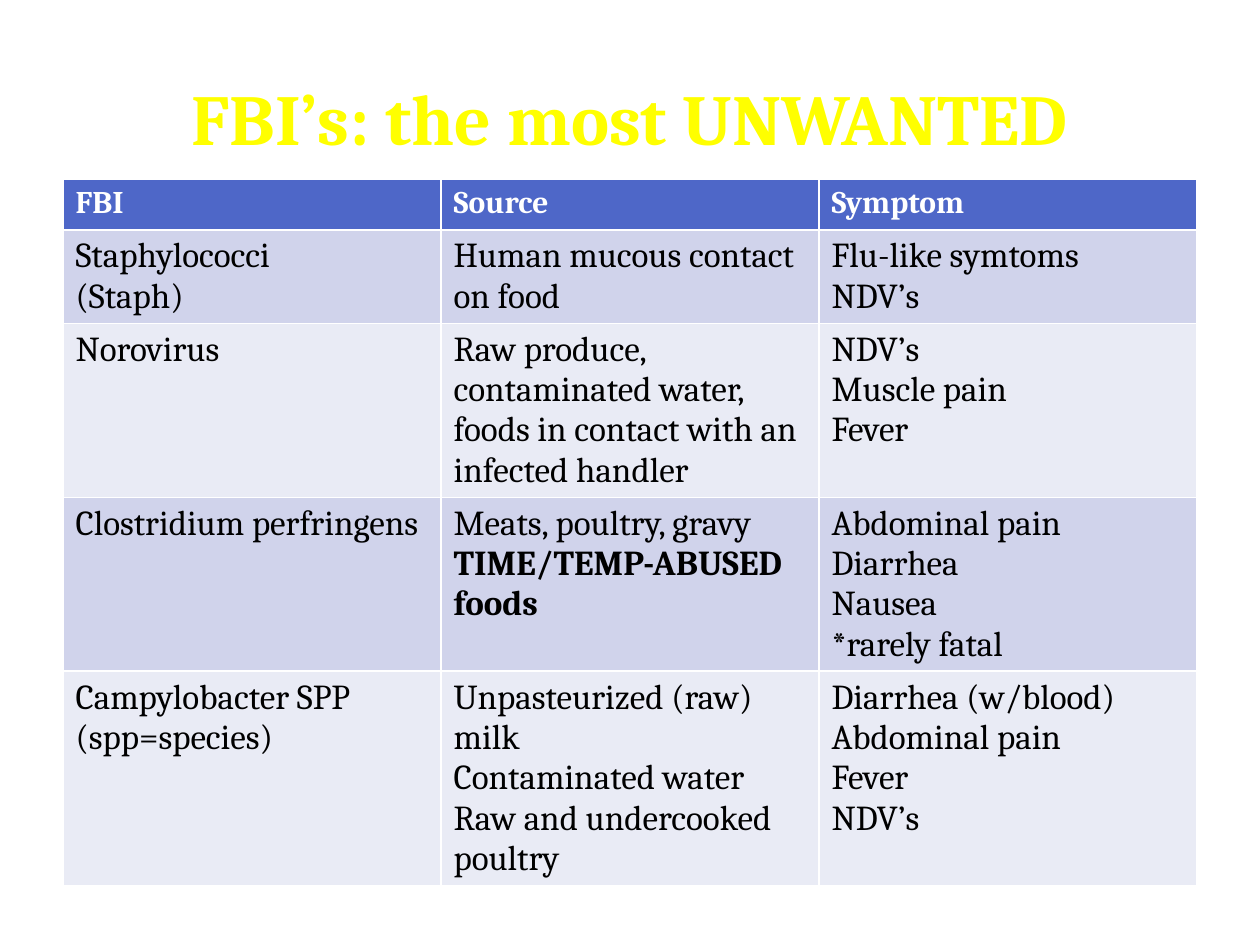
"""Build a slide tabulating foodborne illnesses, their sources and symptoms."""
from dataclasses import dataclass

from pptx import Presentation
from pptx import util as u
from pptx.dml.color import RGBColor
from pptx.enum import text

PX = 914400 / 126
FONT = "Cambria"
HEADINGS = ("FBI", "Source", "Symptom")
BANDS = ("D0D3EB", "E9EBF5")


@dataclass(frozen=True)
class Illness:
    """One table row, with its height in px and any source line to stress."""
    height: int
    name: str
    source: str
    symptoms: str
    stressed: str = ""


ILLNESSES = (
    Illness(93, "Staphylococci\n(Staph)", "Human mucous contact on food",
            "Flu-like symtoms\nNDV’s"),
    Illness(174, "Norovirus",
            "Raw produce, contaminated water, foods in contact with an infected handler",
            "NDV’s\nMuscle pain\nFever"),
    Illness(174, "Clostridium perfringens",
            "Meats, poultry, gravy\nTIME/TEMP-ABUSED foods",
            "Abdominal pain\nDiarrhea\nNausea\n*rarely fatal",
            stressed="TIME/TEMP-ABUSED foods"),
    Illness(213, "Campylobacter SPP\n(spp=species)",
            "Unpasteurized (raw) milk\nContaminated water\nRaw and undercooked poultry",
            "Diarrhea (w/blood)\nAbdominal pain\nFever\nNDV’s"),
)


def px(length: int) -> int:
    """Turn px into EMU."""
    return round(length * PX)


def color(value: str) -> RGBColor:
    """Turn a hex string into a colour."""
    return RGBColor.from_string(value)


def style(paragraph, size: int, ink: str, bold: bool) -> None:
    """Format every run of a paragraph."""
    for run in paragraph.runs:
        run.font.name = FONT
        run.font.size = u.Pt(size)
        run.font.bold = bold
        run.font.color.rgb = color(ink)


def fill_cell(cell, words: str, fill: str, size: int = 20, ink: str = "000000",
              bold: bool = False, stressed: str = "") -> None:
    """Write and colour one table cell."""
    cell.fill.solid()
    cell.fill.fore_color.rgb = color(fill)
    cell.text_frame.text = words
    for paragraph in cell.text_frame.paragraphs:
        style(paragraph, size, ink, bold or paragraph.text == stressed)


def add_title(slide, words: str) -> None:
    """Place and format the slide title."""
    title = slide.shapes.title
    title.left, title.top, title.width, title.height = map(px, (63, 38, 1134, 158))
    title.text_frame.text = words
    title.text_frame.vertical_anchor = text.MSO_ANCHOR.MIDDLE
    heading = title.text_frame.paragraphs[0]
    heading.alignment = text.PP_ALIGN.CENTER
    style(heading, 41, "FFFF00", True)


def add_illnesses(slide) -> None:
    """Draw the table of illnesses under its header row."""
    heights = [51] + [illness.height for illness in ILLNESSES]
    table = slide.shapes.add_table(len(heights), len(HEADINGS), px(63), px(179),
                                   px(1134), px(sum(heights))).table
    for row, height in zip(table.rows, heights):
        row.height = px(height)
    for column, heading in enumerate(HEADINGS):
        fill_cell(table.cell(0, column), heading, "4E67C8", 18, "FFFFFF", True)
    for index, illness in enumerate(ILLNESSES):
        facts = (illness.name, illness.source, illness.symptoms)
        for column, fact in enumerate(facts):
            fill_cell(table.cell(index + 1, column), fact, BANDS[index % 2],
                      stressed=illness.stressed)


def main() -> None:
    """Build and save the slide."""
    deck = Presentation()
    deck.slide_width, deck.slide_height = px(1260), px(945)
    slide = deck.slides.add_slide(deck.slide_layouts[5])
    add_title(slide, "FBI’s: the most UNWANTED")
    add_illnesses(slide)
    deck.save("out.pptx")


if __name__ == "__main__":
    main()
